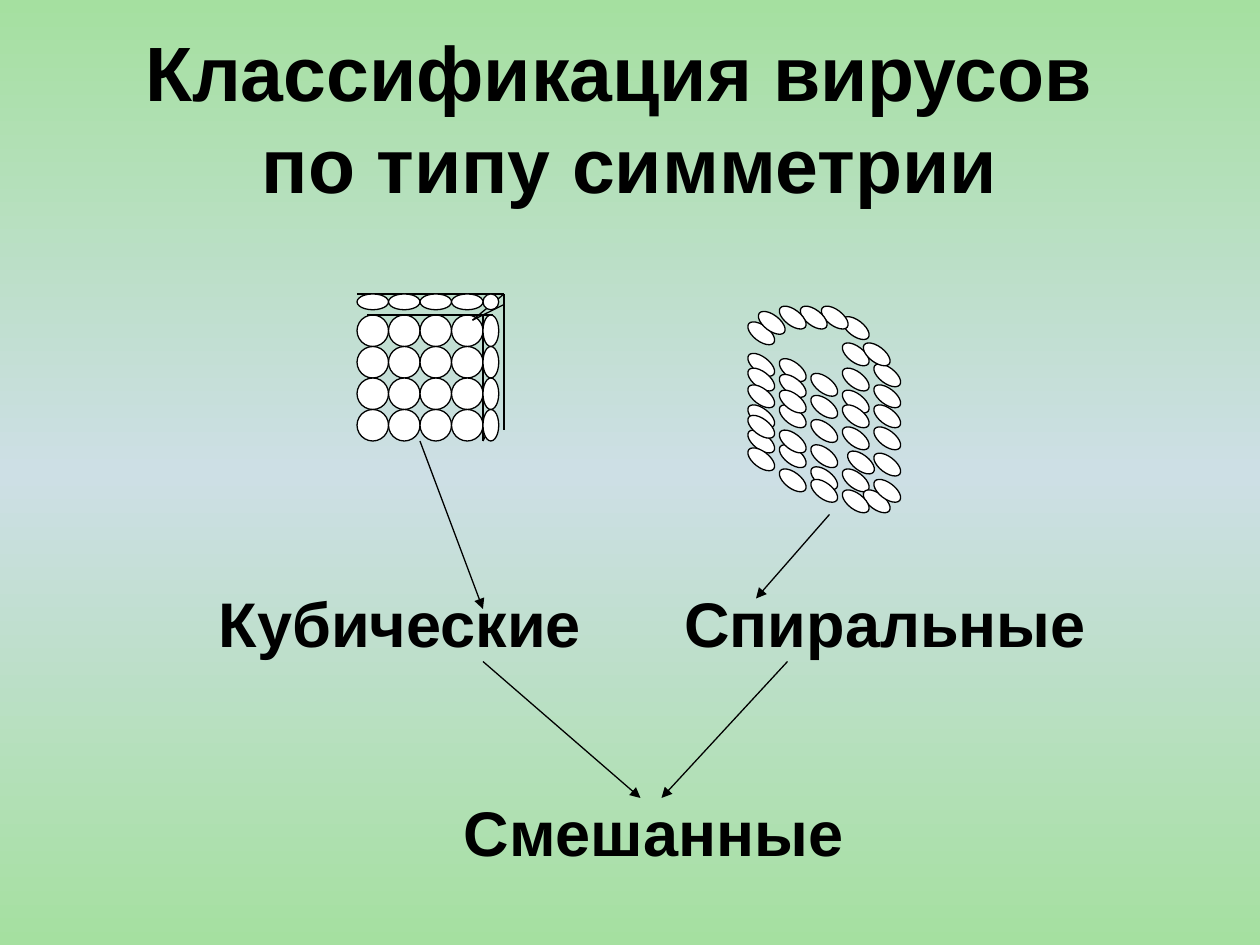
import copy

from pptx import Presentation, util as u
from pptx.dml.color import RGBColor
from pptx.enum import shapes, text
from pptx.oxml import ns
from lxml import etree

THEME = dict(font="Arial", title=44, label=36, line=0.75,
             ink=RGBColor.from_string("000000"),
             ball=RGBColor.from_string("FFFFFF"),
             sky=["A5E0A0", "CDDFE5", "A5E0A0"])

prs = Presentation()
prs.slide_width, prs.slide_height = u.Inches(10), u.Inches(7.5)
CELL = prs.slide_width / 120  # the slide is a grid of 120 columns by 90 rows
s = prs.slides.add_slide(prs.slide_layouts[6])


def add_ball(col, row, cols, rows, angle=0):
    sp = s.shapes.add_shape(shapes.MSO_SHAPE.OVAL,
                            *(round(v * CELL) for v in (col, row, cols, rows)))
    sp.shadow.inherit = False
    sp.rotation = angle
    sp.fill.solid()
    sp.fill.fore_color.rgb = THEME["ball"]
    sp.line.color.rgb = THEME["ink"]
    sp.line.width = u.Pt(THEME["line"])


def add_lines(lines, arrow=False):
    """Draw straight lines given as (col, row, col, row)."""
    for ends in lines:
        cx = s.shapes.add_connector(shapes.MSO_CONNECTOR.STRAIGHT,
                                    *(round(v * CELL) for v in ends))
        cx.line.color.rgb = THEME["ink"]
        cx.line.width = u.Pt(THEME["line"])
        sp_pr = cx._element.spPr
        if arrow:
            etree.SubElement(sp_pr.find(ns.qn("a:ln")), ns.qn("a:tailEnd"), type="triangle")
        etree.SubElement(sp_pr, ns.qn("a:effectLst"))


# Background: green, blue in the middle, green
fill = s.background.fill
fill.gradient()
fill.gradient_angle = 90
first = next(s._element.iter(ns.qn("a:gs")))
first.addnext(copy.deepcopy(first))
for i, (stop, colour) in enumerate(zip(fill.gradient_stops, THEME["sky"])):
    stop.position = i / 2
    stop.color.rgb = RGBColor.from_string(colour)

# Cubic virus: front face, edges, then the right and top faces
BALL, THIN = 3, 1.5
LEFT, TOP, BACK, SIDE = 34, 30, 28, 46
for row in range(4):
    for col in range(4):
        add_ball(LEFT + col * BALL, TOP + row * BALL, BALL, BALL)
add_lines([
    (35, TOP, 47, TOP), (SIDE, TOP, SIDE, 42), (45, 30.5, 48, 29),
    (48, BACK, 48, 41), (SIDE, 42, 47, 40), (45, 30.5, 48, BACK),
    (LEFT, BACK, 48, BACK),
])
add_ball(SIDE, BACK, THIN, THIN)
for i in range(4):
    add_ball(SIDE, TOP + i * BALL, THIN, BALL)
    add_ball(LEFT + i * BALL, BACK, BALL, THIN)

# Spiral virus: strands as (column, rows), from back to front
strands = [
    (71, [38.9, 41.3, 39.9, 31, 34, 35.4, 43, 37]),
    (74, [42.7, 41.3, 38.9, 34.5, 36, 37.5, 45]),
    (77, [44.8, 42.7, 38, 35.9, 40.3, 46]),
    (80, [45]), (80.5, [43.3]), (82, [47]),
    (80, [33, 30.5, 35.4, 37.5, 38.9, 41, 47]),
    (83, [41, 38.9, 35, 37, 46, 43.5]),
    (82, [33]), (72, [30]),
    (78, [29.5]), (76, [29.5]), (74, [29.5]),
]
for col, rows in strands:
    for row in rows:
        add_ball(col, row, BALL, THIN, 37.4)

add_lines([(79, 49, 72, 57), (46, 63, 61, 76), (40, 42, 46, 58), (75, 63, 63, 76)],
          arrow=True)

# Title and labels: (lines, box in cells, size, is title)
texts = [
    (["Классификация вирусов ", "по типу симметрии"], (6, 3.6, 108, 15), THEME["title"], True),
    ([" Кубические"], (18, 55.1, 40.3, 8.4), THEME["label"], False),
    (["Спиральные"], (64, 55.1, 40.7, 8.4), THEME["label"], False),
    (["Смешанные"], (43, 75, 39, 8.4), THEME["label"], False),
]
for lines, box, size, is_title in texts:
    tf = s.shapes.add_textbox(*(round(v * CELL) for v in box)).text_frame
    tf.word_wrap = is_title
    p = tf.paragraphs[0]
    if is_title:
        tf.vertical_anchor = text.MSO_ANCHOR.MIDDLE
        p.alignment = text.PP_ALIGN.CENTER
    else:
        tf.auto_size = text.MSO_AUTO_SIZE.SHAPE_TO_FIT_TEXT
    for i, line in enumerate(lines):
        if i:
            p.add_line_break()
        r = p.add_run()
        r.text = line
        r.font.name, r.font.size, r.font.bold = THEME["font"], u.Pt(size), True
        r.font.color.rgb = THEME["ink"]

prs.save("out.pptx")
